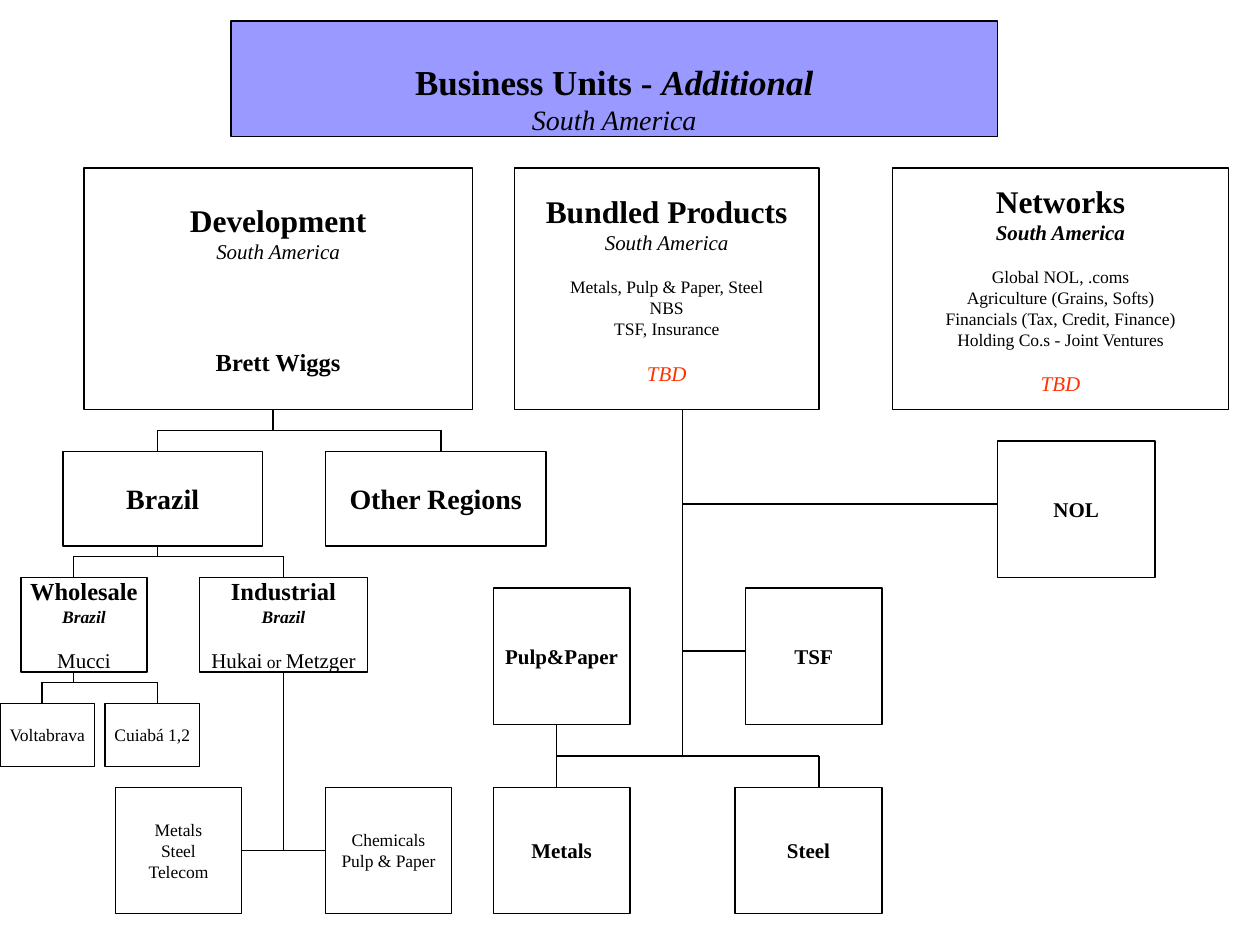
from dataclasses import dataclass

from lxml.etree import SubElement
from pptx import Presentation
from pptx.dml.color import RGBColor
from pptx.enum.shapes import MSO_CONNECTOR, MSO_SHAPE
from pptx.enum.text import MSO_ANCHOR, MSO_AUTO_SIZE, PP_ALIGN
from pptx.oxml.ns import qn
from pptx.util import Pt

PX = 7620  # EMU per px, 120 px to the inch


@dataclass(frozen=True)
class Theme:
    font: str = "Times New Roman"
    ink: str = "000000"
    paper: str = "FFFFFF"
    banner: str = "9999FF"
    open_post: str = "FF3300"
    line: float = 0.75
    title: int = 20
    unit: int = 18
    region: int = 16
    team: int = 14
    label: int = 12
    small: int = 10
    gap: int = 12


T = Theme()

HEAD = dict(size=T.unit, bold=True)
REGION = dict(size=T.region, bold=True)
TEAM = dict(size=T.team, bold=True)
LABEL = dict(size=T.label, bold=True)
PLACE = dict(size=T.label, italic=True)
TEAM_PLACE = dict(size=T.small, bold=True, italic=True)
PERSON = dict(size=T.label, gap=T.gap)
TBD = ("TBD", dict(size=T.label, italic=True, color=T.open_post, gap=T.gap))


def px(*values):
    return [v * PX for v in values]


def add_text(tf, text, size=T.small, bold=False, italic=False, color=T.ink,
             gap=0, same_line=False):
    """Write text as a new paragraph, or as a further run of the last one."""
    p = tf.paragraphs[-1]
    if p.runs and not same_line:
        p = tf.add_paragraph()
    if not same_line:
        p.alignment = PP_ALIGN.CENTER
        p.space_before = Pt(gap)
    r = p.add_run()
    r.text = text
    r.font.name = T.font
    r.font.size = Pt(size)
    r.font.bold = bold
    r.font.italic = italic
    r.font.color.rgb = RGBColor.from_string(color)


def style_box(sp, fill, anchor=MSO_ANCHOR.MIDDLE):
    sp.fill.solid()
    sp.fill.fore_color.rgb = RGBColor.from_string(fill)
    sp.line.color.rgb = RGBColor.from_string(T.ink)
    sp.line.width = Pt(T.line)
    tf = sp.text_frame
    tf.word_wrap = False
    tf.auto_size = MSO_AUTO_SIZE.NONE
    tf.vertical_anchor = anchor
    return tf


def add_title(s):
    sp = s.shapes.title
    sp.left, sp.top, sp.width, sp.height = px(220, 20, 730, 110)
    tf = style_box(sp, T.banner, MSO_ANCHOR.BOTTOM)
    tf.margin_bottom = 0
    add_text(tf, "Business Units - ", size=T.title, bold=True)
    add_text(tf, "Additional", size=T.title, bold=True, italic=True, same_line=True)
    add_text(tf, "South America", size=T.region, italic=True)


def add_box(s, x, y, w, h, *lines):
    """Add a box; each line is plain small text or a (text, format) pair."""
    sp = s.shapes.add_shape(MSO_SHAPE.RECTANGLE, *px(x, y, w, h))
    sp.shadow.inherit = False
    tf = style_box(sp, T.paper)
    for line in lines:
        text, fmt = (line, {}) if isinstance(line, str) else line
        add_text(tf, text, **fmt)


def add_line(s, x1, y1, x2, y2):
    c = s.shapes.add_connector(MSO_CONNECTOR.STRAIGHT, *px(x1, y1, x2, y2))
    c.line.color.rgb = RGBColor.from_string(T.ink)
    c.line.width = Pt(T.line)
    SubElement(c._element.spPr, qn("a:effectLst"))


def add_branch(s, x, top, bar, child_xs, bottom):
    """Join a parent at x to its children through a horizontal bar."""
    add_line(s, x, top, x, bar)
    add_line(s, min(child_xs), bar, max(child_xs), bar)
    for child_x in child_xs:
        add_line(s, child_x, bar, child_x, bottom)


def add_units(s):
    top, height = 160, 230
    add_box(s, 80, top, 370, height, ("Development", HEAD), ("South America", PLACE),
            ("Brett Wiggs", dict(TEAM, gap=4 * T.gap)))
    add_box(s, 490, top, 290, height, ("Bundled Products", HEAD), ("South America", PLACE),
            ("Metals, Pulp & Paper, Steel", dict(gap=T.gap)), "NBS", "TSF, Insurance", TBD)
    add_box(s, 850, top, 320, height, ("Networks", HEAD),
            ("South America", dict(PLACE, bold=True)),
            ("Global NOL, .coms", dict(gap=T.gap)), "Agriculture (Grains, Softs)",
            "Financials (Tax, Credit, Finance)", "Holding Co.s - Joint Ventures", TBD)


def add_development_tree(s):
    add_box(s, 60, 430, 190, 90, ("Brazil", REGION))
    add_box(s, 310, 430, 210, 90, ("Other Regions", REGION))
    add_box(s, 20, 550, 120, 90, ("Wholesale", TEAM), ("Brazil", TEAM_PLACE),
            ("Mucci", PERSON))
    add_box(s, 190, 550, 160, 90, ("Industrial", TEAM), ("Brazil", TEAM_PLACE),
            ("Hukai", PERSON), (" or ", dict(same_line=True)),
            ("Metzger", dict(size=T.label, same_line=True)))
    add_box(s, 0, 670, 90, 60, "Voltabrava")
    add_box(s, 100, 670, 90, 60, "Cuiabá 1,2")
    add_box(s, 110, 750, 120, 120, "Metals", "Steel", "Telecom")
    add_box(s, 310, 750, 120, 120, "Chemicals", "Pulp & Paper")

    add_branch(s, 260, 390, 410, [150, 420], 430)
    add_branch(s, 150, 520, 530, [70, 270], 550)
    add_branch(s, 70, 640, 650, [40, 150], 670)
    add_line(s, 270, 640, 270, 810)
    for edge in (230, 310):
        add_line(s, 270, 810, edge, 810)


def add_products_tree(s):
    for name, *box in [("Pulp&Paper", 470, 560, 130, 130), ("TSF", 710, 560, 130, 130),
                       ("Metals", 470, 750, 130, 120), ("Steel", 700, 750, 140, 120),
                       ("NOL", 950, 420, 150, 130)]:
        add_box(s, *box, (name, LABEL))

    add_branch(s, 650, 390, 720, [530, 780], 750)
    add_line(s, 530, 690, 530, 720)
    for edge, y in [(710, 620), (950, 480)]:
        add_line(s, 650, y, edge, y)


def main():
    prs = Presentation()
    prs.slide_width, prs.slide_height = px(1200, 900)
    s = prs.slides.add_slide(prs.slide_layouts[5])
    add_title(s)
    add_units(s)
    add_development_tree(s)
    add_products_tree(s)
    prs.save("out.pptx")


if __name__ == "__main__":
    main()
